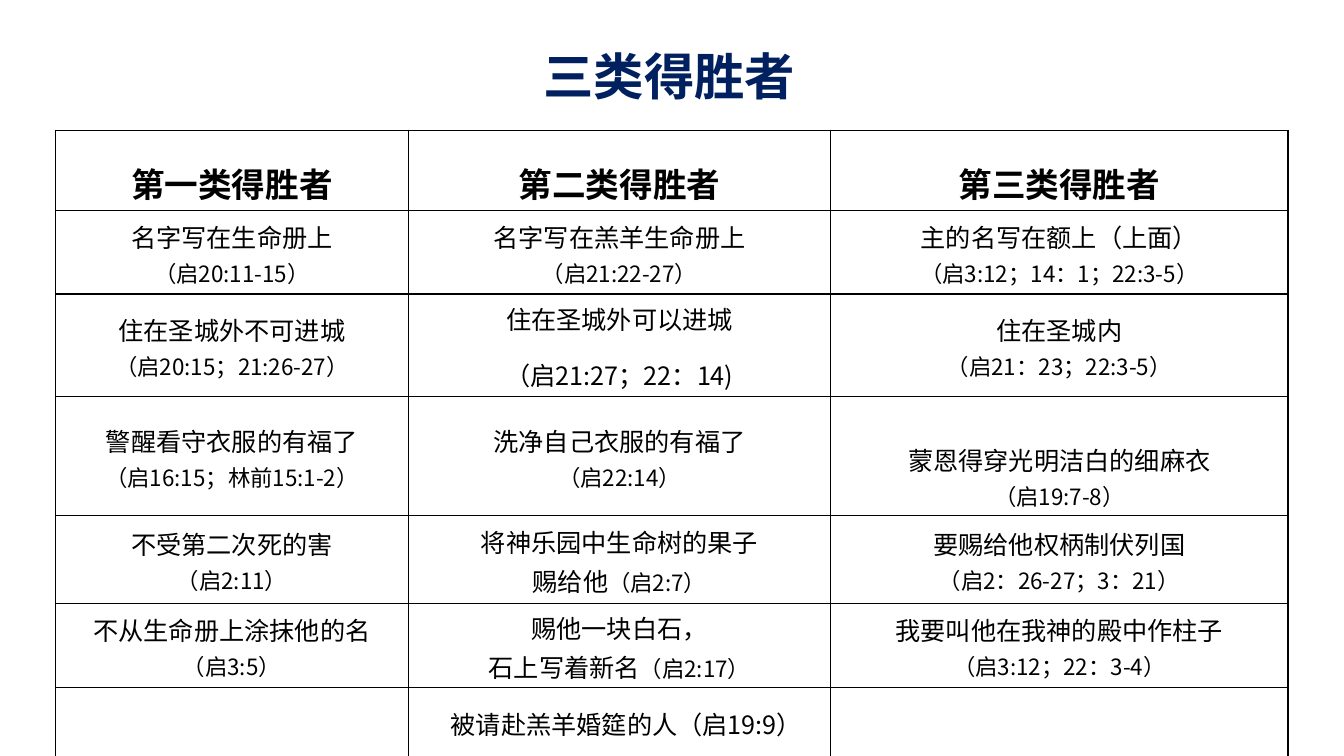
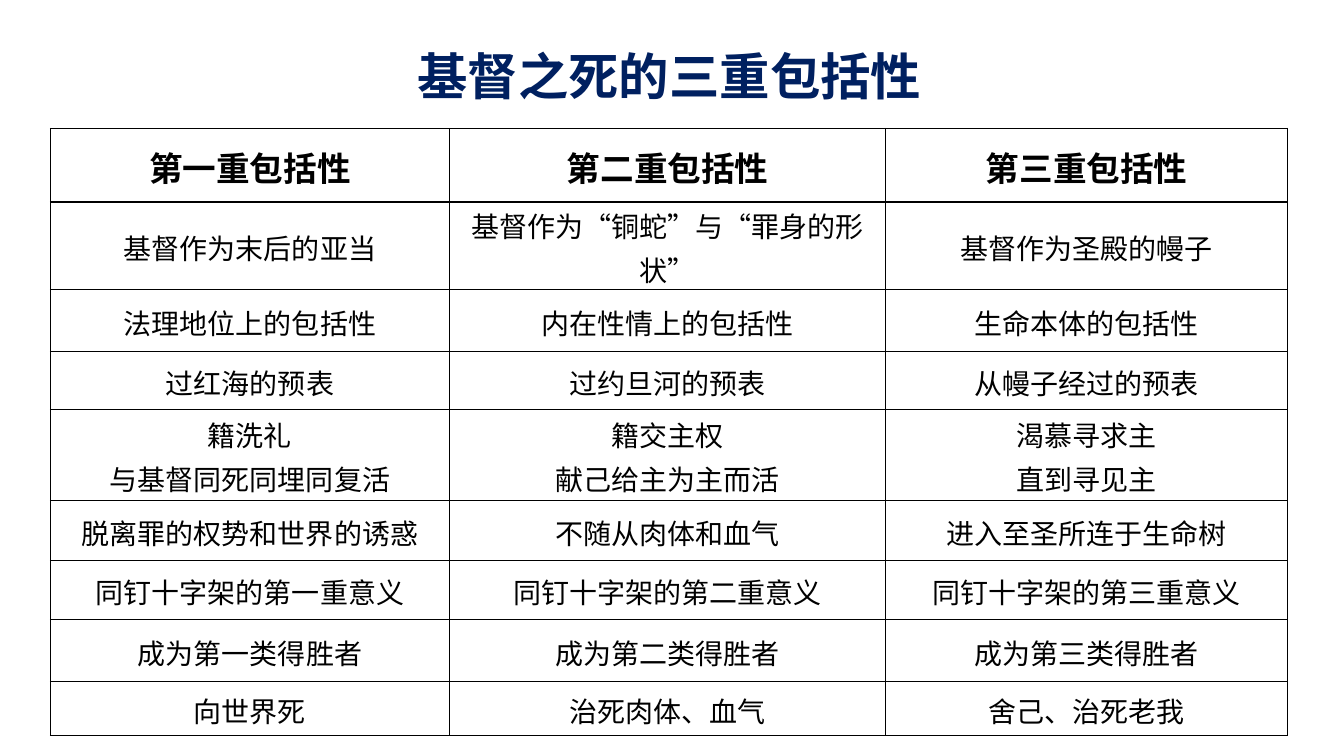
"""Build two slides, each a centred title above a three-column comparison table."""
from lxml import etree
from pptx import Presentation
from pptx.dml.color import RGBColor
from pptx.enum.lang import MSO_LANGUAGE_ID
from pptx.enum.text import MSO_ANCHOR, PP_ALIGN
from pptx.oxml.ns import qn
from pptx.util import Cm, Pt

CENTER = PP_ALIGN.CENTER
MIDDLE = MSO_ANCHOR.MIDDLE
CHINESE = MSO_LANGUAGE_ID.SIMPLIFIED_CHINESE

THEME = {
    "font": "Noto Sans CJK SC",
    "title_color": RGBColor(0x00, 0x20, 0x60),
    "text_color": RGBColor(0x00, 0x00, 0x00),
    "border_color": "000000",
    "border_width": Pt(1),
    "title_size": Pt(36),
    "header_size": Pt(24),
    "reference_size": Pt(16),
    "title_spacing": 0.9,
    "body_spacing": 1.07,
    "paragraph_gap": Pt(12),
    "side_margin": 0.18,
}

COMPARISONS = [
    {
        "title": "三类得胜者",
        "left": 1.4, "top": 3.28,
        "widths": [8.89, 10.64, 11.53],
        "heights": [2.02, 2.11, 2.58, 3, 2.21, 2.13, 1.73],
        "header_spacing": 1.5, "body_size": Pt(18), "margin": 0.08,
        "extra_left_top": {(3, 2): (0, 0.98), (6, 1): (0.35, 0)},
        "rows": [
            ["第一类得胜者", "第二类得胜者", "第三类得胜者"],
            ["名字写在生命册上\v|（启20:11-15）",
             "名字写在羔羊生命册上\v|（启21:22-27）",
             "主的名写在额上（上面）\v|（启3:12；14：1；22:3-5）"],
            ["住在圣城外不可进城\v|（启20:15；21:26-27）",
             "住在圣城外可以进城\n（启21:27；22：14)",
             "住在圣城内\v|（启21：23；22:3-5）"],
            ["警醒看守衣服的有福了\v|（启16:15；林前15:1-2）",
             "洗净自己衣服的有福了\v|（启22:14）",
             "蒙恩得穿光明洁白的细麻衣\v|（启19:7-8）"],
            ["不受第二次死的害\v|（启2:11）",
             "将神乐园中生命树的果子\v赐给他|（启2:7）",
             "要赐给他权柄制伏列国\v|（启2：26-27；3：21）"],
            ["不从生命册上涂抹他的名\v|（启3:5）",
             "赐他一块白石，\v石上写着新名|（启2:17）",
             "我要叫他在我神的殿中作柱子\v|（启3:12；22：3-4）"],
            ["", "被请赴羔羊婚筵的人（启19:9）", ""],
        ],
    },
    {
        "title": "基督之死的三重包括性",
        "left": 1.27, "top": 3.24,
        "widths": [10.06, 10.99, 10.13],
        "heights": [1.85, 2.2, 1.57, 1.45, 2.31, 1.5, 1.5, 1.55, 1.37],
        "header_spacing": 1.07, "body_size": Pt(20), "margin": 0,
        "extra_left_top": {},
        "rows": [
            ["第一重包括性", "第二重包括性", "第三重包括性"],
            ["基督作为末后的亚当", "基督作为“铜蛇”与“罪身的形状”", "基督作为圣殿的幔子"],
            ["法理地位上的包括性", "内在性情上的包括性", "生命本体的包括性"],
            ["过红海的预表", "过约旦河的预表", "从幔子经过的预表"],
            ["籍洗礼\v与基督同死同埋同复活", "籍交主权\v献己给主为主而活", "渴慕寻求主\v直到寻见主"],
            ["脱离罪的权势和世界的诱惑", "不随从肉体和血气", "进入至圣所连于生命树"],
            ["同钉十字架的第一重意义", "同钉十字架的第二重意义", "同钉十字架的第三重意义"],
            ["成为第一类得胜者", "成为第二类得胜者", "成为第三类得胜者"],
            ["向世界死", "治死肉体、血气", "舍己、治死老我"],
        ],
    },
]


def write_text(frame, text, size, color, bold, spacing):
    """Write paragraphs, with the part after a bar in the reference size."""
    main_lines = [line.partition("|") for line in text.split("\n")]
    frame.text = "\n".join(main for main, _, _ in main_lines)
    for index, (paragraph, (_, _, reference)) in enumerate(zip(frame.paragraphs, main_lines)):
        paragraph.alignment = CENTER
        paragraph.line_spacing = spacing
        if index:
            paragraph.space_before = THEME["paragraph_gap"]
        sized_runs = [(run, size) for run in paragraph.runs]
        if reference:
            reference_run = paragraph.add_run()
            reference_run.text = reference
            sized_runs.append((reference_run, THEME["reference_size"]))
        for run, run_size in sized_runs:
            run.font.size = run_size
            run.font.bold = bold
            run.font.color.rgb = color
            run.font.name = THEME["font"]
            run.font.language_id = CHINESE
            east_asian = etree.SubElement(run.font._element, qn("a:ea"))
            east_asian.set("typeface", THEME["font"])


def draw_borders(cell):
    """Give a cell a solid line on all four sides."""
    properties = cell._tc.get_or_add_tcPr()
    for side in ("a:lnL", "a:lnR", "a:lnT", "a:lnB"):
        line = etree.SubElement(properties, qn(side), w=str(THEME["border_width"]))
        fill = etree.SubElement(line, qn("a:solidFill"))
        etree.SubElement(fill, qn("a:srgbClr"), val=THEME["border_color"])


deck = Presentation()
deck.slide_width, deck.slide_height = Cm(33.87), Cm(19.05)
blank_layout = deck.slide_layouts[6]

for comparison in COMPARISONS:
    slide = deck.slides.add_slide(blank_layout)
    title = slide.shapes.add_textbox(Cm(2.02), Cm(0.95), Cm(29.7), Cm(2.1)).text_frame
    title.word_wrap = True
    title.vertical_anchor = MIDDLE
    write_text(title, comparison["title"], THEME["title_size"],
               THEME["title_color"], True, THEME["title_spacing"])

    widths, heights = comparison["widths"], comparison["heights"]
    grid = slide.shapes.add_table(
        len(heights), len(widths), Cm(comparison["left"]), Cm(comparison["top"]),
        Cm(sum(widths)), Cm(sum(heights))).table
    grid.first_row = False
    grid.horz_banding = False
    for column, width in zip(grid.columns, widths):
        column.width = Cm(width)
    for row, height in zip(grid.rows, heights):
        row.height = Cm(height)

    for row_index, texts in enumerate(comparison["rows"]):
        is_header = row_index == 0
        size = THEME["header_size"] if is_header else comparison["body_size"]
        spacing = comparison["header_spacing"] if is_header else THEME["body_spacing"]
        for column_index, text in enumerate(texts):
            cell = grid.cell(row_index, column_index)
            extra_left, extra_top = comparison["extra_left_top"].get(
                (row_index, column_index), (0, 0))
            cell.margin_left = Cm(THEME["side_margin"] + extra_left)
            cell.margin_right = Cm(THEME["side_margin"])
            cell.margin_top = Cm(comparison["margin"] + extra_top)
            cell.margin_bottom = Cm(comparison["margin"])
            cell.vertical_anchor = MIDDLE
            draw_borders(cell)
            cell.fill.background()
            write_text(cell.text_frame, text, size, THEME["text_color"], is_header, spacing)

deck.save("out.pptx")
